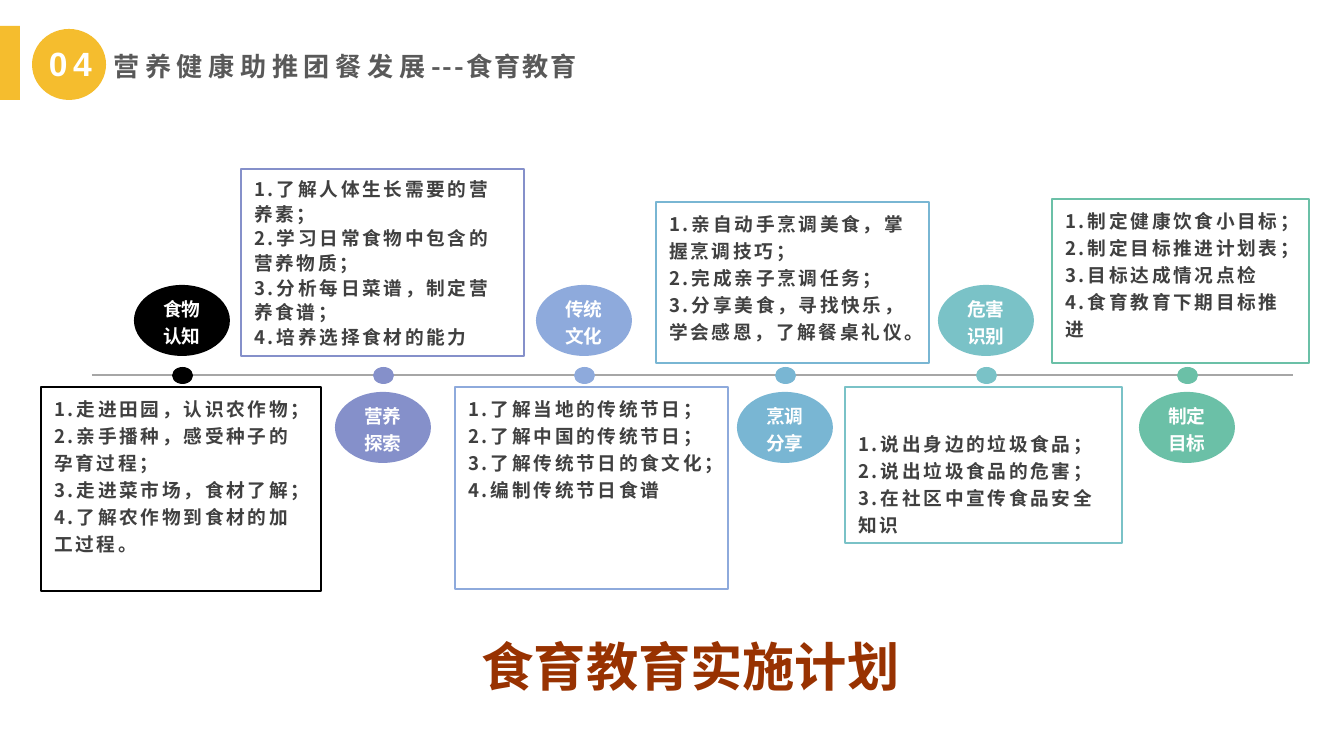
import pptx
import pptx.util
import pptx.dml.color
import pptx.enum.shapes
import pptx.enum.text
import lxml.etree

RGBColor = pptx.dml.color.RGBColor
Shape = pptx.enum.shapes.MSO_SHAPE
Anchor = pptx.enum.text.MSO_ANCHOR
Align = pptx.enum.text.PP_ALIGN
qn = pptx.oxml.ns.qn

EMU_PER_PX = 914400 / 134.4
YELLOW = RGBColor(0xF5, 0xBD, 0x2E)
WHITE = RGBColor(0xFF, 0xFF, 0xFF)
GREY = RGBColor(0xA6, 0xA6, 0xA6)
HEADING = RGBColor(0x59, 0x59, 0x59)
BODY = RGBColor(0x40, 0x40, 0x40)
BROWN = RGBColor(0x98, 0x32, 0x01)
BLACK = RGBColor(0x00, 0x00, 0x00)
VIOLET = RGBColor(0x85, 0x90, 0xCA)
BLUE = RGBColor(0x8E, 0xAA, 0xDC)
SKY = RGBColor(0x79, 0xB6, 0xD3)
TEAL = RGBColor(0x7A, 0xC2, 0xC7)
GREEN = RGBColor(0x6B, 0xC0, 0xA7)

SANS = "Noto Sans CJK SC"
SANS_JP = "Noto Sans CJK JP"

# Timeline: label, colour, box (left, top, width, height), box format, points
STAGES = [
    ("食物\n认知", BLACK, (41, 387, 280, 204), {},
     ["1.走进田园，认识农作物；", "2.亲手播种，感受种子的孕育过程；",
      "3.走进菜市场，食材了解；", "4.了解农作物到食材的加工过程。"]),
    ("营养\n探索", VIOLET, (241, 169, 283, 187), {"line_spacing": 1.1},
     ["1.了解人体生长需要的营养素；", "2.学习日常食物中包含的营养物质；",
      "3.分析每日菜谱，制定营养食谱；", "4.培养选择食材的能力"]),
    ("传统\n文化", BLUE, (455, 387, 273, 202), {},
     ["1.了解当地的传统节日；", "2.了解中国的传统节日；",
      "3.了解传统节日的食文化；", "4.编制传统节日食谱"]),
    ("烹调\n分享", SKY, (656, 202, 273, 161), {},
     ["1.亲自动手烹调美食，掌握烹调技巧；", "2.完成亲子烹调任务；",
      "3.分享美食，寻找快乐，学会感恩，了解餐桌礼仪。"]),
    ("危害\n识别", TEAL, (845, 387, 277, 156), {"anchor": Anchor.BOTTOM},
     ["1.说出身边的垃圾食品；", "2.说出垃圾食品的危害；",
      "3.在社区中宣传食品安全知识"]),
    ("制定\n目标", GREEN, (1052, 199, 257, 164), {},
     ["1.制定健康饮食小目标；", "2.制定目标推进计划表；",
      "3.目标达成情况点检", "4.食育教育下期目标推进"]),
]
STAGE_LEFT, STAGE_PITCH = 134, 201


def px(*lengths):
    return [pptx.util.Emu(round(length * EMU_PER_PX)) for length in lengths]


def add_span(para, text, size, color, font=SANS, east_asian=SANS, spacing=0):
    """Add bold text to a paragraph; a newline becomes a line break."""
    for index, part in enumerate(text.split("\n")):
        if index:
            para.add_line_break()
        span = para.add_run()
        span.text = part
        span.font.size = pptx.util.Pt(size)
        span.font.bold = True
        span.font.name = font
        span.font.color.rgb = color
        properties = span.font._element
        lxml.etree.SubElement(properties, qn("a:ea")).set("typeface", east_asian)
        if spacing:
            properties.set("spc", str(round(spacing * 100)))


class SlideBuilder:
    def __init__(self, page):
        self.page = page

    def shape(self, kind, area, fill=None, line=None):
        shape = self.page.shapes.add_shape(kind, *px(*area))
        shape.shadow.inherit = False
        if fill is None:
            shape.fill.background()
        else:
            shape.fill.solid()
            shape.fill.fore_color.rgb = fill
        if line is None:
            shape.line.fill.background()
        else:
            shape.line.color.rgb = line
            shape.line.width = pptx.util.Pt(0.75)
        return shape

    def line(self, start, end, color, width):
        line = self.page.shapes.add_connector(
            pptx.enum.shapes.MSO_CONNECTOR.STRAIGHT, *px(*start, *end))
        line.line.color.rgb = color
        line.line.width = pptx.util.Pt(width)
        lxml.etree.SubElement(line._element.spPr, qn("a:effectLst"))

    def fill_text(self, box, paragraphs, align=Align.LEFT, anchor=Anchor.TOP,
                  line_spacing=1.0, wrap=True, margins=None):
        """Fill a box with paragraphs, each a list of (text, format) spans."""
        frame = box.text_frame
        frame.word_wrap = wrap
        frame.vertical_anchor = anchor
        if margins:
            side, end = px(*margins)
            frame.margin_left = frame.margin_right = side
            frame.margin_top = frame.margin_bottom = end
        for index, spans in enumerate(paragraphs):
            para = frame.add_paragraph() if index else frame.paragraphs[0]
            para.alignment = align
            para.line_spacing = line_spacing
            for text, style in spans:
                add_span(para, text, **style)

    def text(self, area, spans, **layout):
        self.fill_text(self.page.shapes.add_textbox(*px(*area)), [spans], **layout)

    def header(self, number, spans):
        self.shape(Shape.OVAL, (32, 29, 74, 71), fill=YELLOW)
        self.shape(Shape.RECTANGLE, (-1, 26, 21, 74), fill=YELLOW)
        layout = {"wrap": False, "margins": (9, 5)}
        self.text((40, 38, 67, 50),
                  [(number, {"size": 18, "color": WHITE, "font": "Arial",
                             "spacing": 3})], **layout)
        self.text((91, 38, 508, 91), spans, **layout)

    def stage(self, left, label, color, box_area, box_format, points):
        """Draw the dot, the labelled oval and the box of one timeline stage."""
        box_below = box_area[1] > 375
        oval = (left, 285 if box_below else 392, 96, 71)
        self.shape(Shape.OVAL, (left + 38, 367, 21, 17), fill=color)
        self.shape(Shape.OVAL, oval, fill=color)
        self.text(oval, [(label, {"size": 10, "color": WHITE})],
                  align=Align.CENTER, anchor=Anchor.MIDDLE, line_spacing=1.2)
        box = self.shape(Shape.RECTANGLE, box_area, line=color)
        style = {"size": 10, "color": BODY, "spacing": 1.5}
        self.fill_text(box, [[(point, style)] for point in points],
                       **{"line_spacing": 1.2, **box_format})


def main():
    deck = pptx.Presentation()
    deck.slide_width, deck.slide_height = px(1344, 756)
    builder = SlideBuilder(deck.slides.add_slide(deck.slide_layouts[6]))

    heading = {"size": 14, "color": HEADING, "font": "Arial", "spacing": 3}
    builder.header("04", [
        (" ", {**heading, "size": 18}),
        ("营养健康助推团餐发展", heading),
        ("---食育教育", {**heading, "font": SANS, "spacing": 1}),
    ])
    builder.line((92, 375), (1293, 375), GREY, 1)
    for index, stage in enumerate(STAGES):
        builder.stage(STAGE_LEFT + index * STAGE_PITCH, *stage)
    builder.text((406, 628, 569, 77),
                 [("食育教育实施计划", {"size": 28, "color": BROWN,
                                "font": SANS_JP, "east_asian": SANS_JP})],
                 align=Align.CENTER)
    deck.save("out.pptx")


if __name__ == "__main__":
    main()
